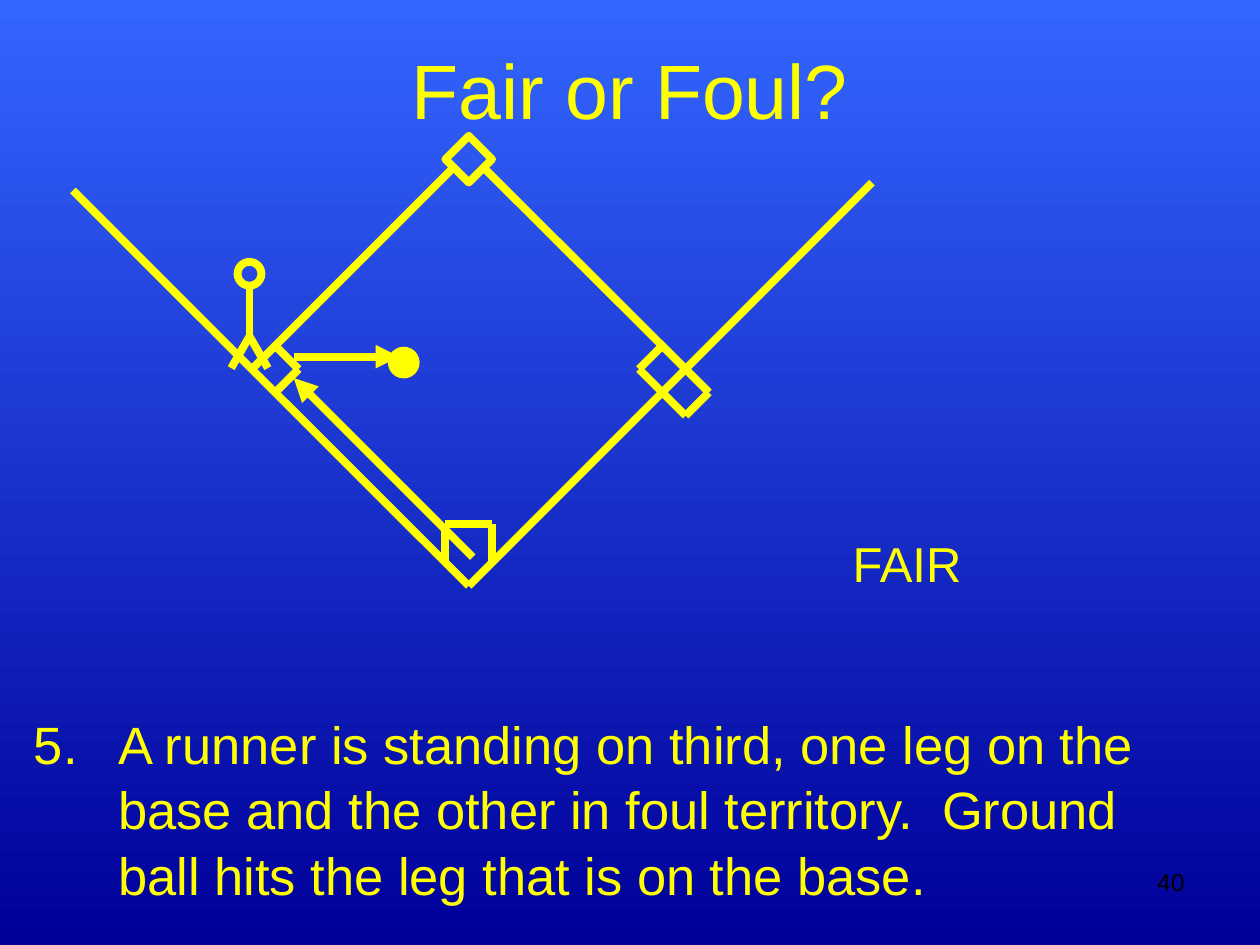
import pptx
import pptx.util
import pptx.dml.color
import pptx.enum.shapes
import pptx.enum.text
from lxml import etree
from pptx.oxml.ns import qn

Cm, Pt = pptx.util.Cm, pptx.util.Pt
RGB = pptx.dml.color.RGBColor.from_string
ALIGN = pptx.enum.text.PP_ALIGN
ANCHOR = pptx.enum.text.MSO_ANCHOR
SHAPE = pptx.enum.shapes.MSO_SHAPE

THEME = {
    "font": "Arial", "chalk": "FFFF00", "number": "000000",
    "sky": ("3366FF", "000099"),
    "title": 44, "question": 30, "answer": 28, "page": 14, "line": 4.5,
}

# Content: text, then drawing in centimetres
TITLE = "Fair or Foul?"
QUESTION = ("5.\tA runner is standing on third, one leg on the base and the other in foul "
            "territory.  Ground ball hits the leg that is on the base.")
ANSWER = "FAIR"
PAGE = "40"

HOME = (9.45, 11.81)
BASE = 0.94                        # width of a base
THIRD, FIRST = (5.08, 7.44), (13.82, 7.44)
HALF = BASE / 2
HOME_LEFT, HOME_RIGHT = HOME[0] - HALF, HOME[0] + HALF
HOME_SIDE, HOME_TOP = HOME[1] - HALF, 10.57

FIELD_PATHS = [
    [HOME, (17.58, 3.68)],         # first base foul line
    [HOME, (1.47, 3.84)],          # third base foul line
    [THIRD, (9.14, 3.38)],
    [FIRST, (9.75, 3.38)],
    [(HOME_LEFT, HOME_SIDE), (HOME_LEFT, HOME_TOP),
     (HOME_RIGHT, HOME_TOP), (HOME_RIGHT, HOME_SIDE)],
    [(THIRD[0] + HALF, THIRD[1] - HALF), (THIRD[0] + BASE, THIRD[1]),
     (THIRD[0] + HALF, THIRD[1] + HALF)],
    [(FIRST[0] - HALF, FIRST[1] - HALF), (FIRST[0] - BASE, FIRST[1]),
     (FIRST[0], FIRST[1] + BASE), (FIRST[0] + HALF, FIRST[1] + HALF), FIRST],
]
SECOND_BASE = (HOME_LEFT, 2.74, BASE, BASE)

HIP = (5.03, 6.78)
RUNNER_HEAD = (4.79, 5.28, 0.48, 0.48)
RUNNER_PATHS = [
    [(HIP[0], 5.76), HIP],
    [(HIP[0] - 0.37, 7.42), HIP, (HIP[0] + 0.37, 7.42)],
]
BALL = (7.82, 6.99, 0.64, 0.64)
HIT = [(9.53, 11.23), (5.92, 7.62)]
REBOUND = [(5.92, 7.19), (8.05, 7.19)]


def place(part, box):
    part.left, part.top, part.width, part.height = map(Cm, box)


def write(part, text, size, color=THEME["chalk"], align=ALIGN.LEFT,
          anchor=ANCHOR.TOP, spacing=1.0, hanging=0):
    frame = part.text_frame
    frame.word_wrap = True
    frame.auto_size = pptx.enum.text.MSO_AUTO_SIZE.NONE
    frame.vertical_anchor = anchor
    paragraph = frame.paragraphs[0]
    paragraph.alignment = align
    paragraph.line_spacing = spacing
    paragraph.space_before = Pt(0)
    run = paragraph.add_run()
    run.text = text
    run.font.size = Pt(THEME[size])
    run.font.name = THEME["font"]
    run.font.color.rgb = RGB(color)
    if hanging:
        properties = paragraph._p.get_or_add_pPr()
        properties.set("marL", str(Cm(hanging)))
        properties.set("indent", str(-Cm(hanging)))
        etree.SubElement(properties, qn("a:buNone"))


def stroke(line):
    line.color.rgb = RGB(THEME["chalk"])
    line.width = Pt(THEME["line"])


def draw_path(shapes, points, arrow=False):
    """Join successive points with straight connectors."""
    for start, end in zip(points, points[1:]):
        segment = shapes.add_connector(pptx.enum.shapes.MSO_CONNECTOR.STRAIGHT,
                                       *map(Cm, start + end))
        stroke(segment.line)
        if arrow:
            etree.SubElement(segment.line._get_or_add_ln(), qn("a:tailEnd"), type="triangle")
        etree.SubElement(segment._element.spPr, qn("a:effectLst"))


def draw_shape(shapes, kind, box, filled=False):
    shape = shapes.add_shape(kind, *map(Cm, box))
    shape.shadow.inherit = False
    if filled:
        shape.fill.solid()
        shape.fill.fore_color.rgb = RGB(THEME["chalk"])
        shape.line.fill.background()
    else:
        shape.fill.background()
        stroke(shape.line)


def draw_group(shapes, paths, kind, box):
    members = shapes.add_group_shape().shapes
    for points in paths:
        draw_path(members, points)
    draw_shape(members, kind, box)


def main():
    deck = pptx.Presentation()
    deck.slide_width, deck.slide_height = Cm(25.4), Cm(19.05)
    slide = deck.slides.add_slide(deck.slide_layouts[1])
    shapes = slide.shapes

    sky = slide.background.fill
    sky.gradient()
    sky.gradient_angle = 270
    for stop, color in zip(sky.gradient_stops, THEME["sky"]):
        stop.color.rgb = RGB(color)

    place(shapes.title, (1.27, 0.2, 22.86, 3.18))
    write(shapes.title, TITLE, "title", align=ALIGN.CENTER, anchor=ANCHOR.MIDDLE)
    question = slide.placeholders[1]
    place(question, (0.43, 14.17, 24.13, 4.45))
    write(question, QUESTION, "question", spacing=1.04, hanging=1.7)

    draw_group(shapes, FIELD_PATHS, SHAPE.DIAMOND, SECOND_BASE)
    draw_shape(shapes, SHAPE.OVAL, BALL, filled=True)
    draw_path(shapes, HIT, arrow=True)
    draw_path(shapes, REBOUND, arrow=True)
    draw_group(shapes, RUNNER_PATHS, SHAPE.OVAL, RUNNER_HEAD)

    answer = shapes.add_textbox(*map(Cm, (16.94, 10.59, 5.72, 1.45)))
    write(answer, ANSWER, "answer", spacing=1.04)
    page = shapes.add_textbox(*map(Cm, (18.21, 17.35, 5.92, 1.32)))
    write(page, PAGE, "page", color=THEME["number"], align=ALIGN.RIGHT)

    deck.save("out.pptx")


if __name__ == "__main__":
    main()
